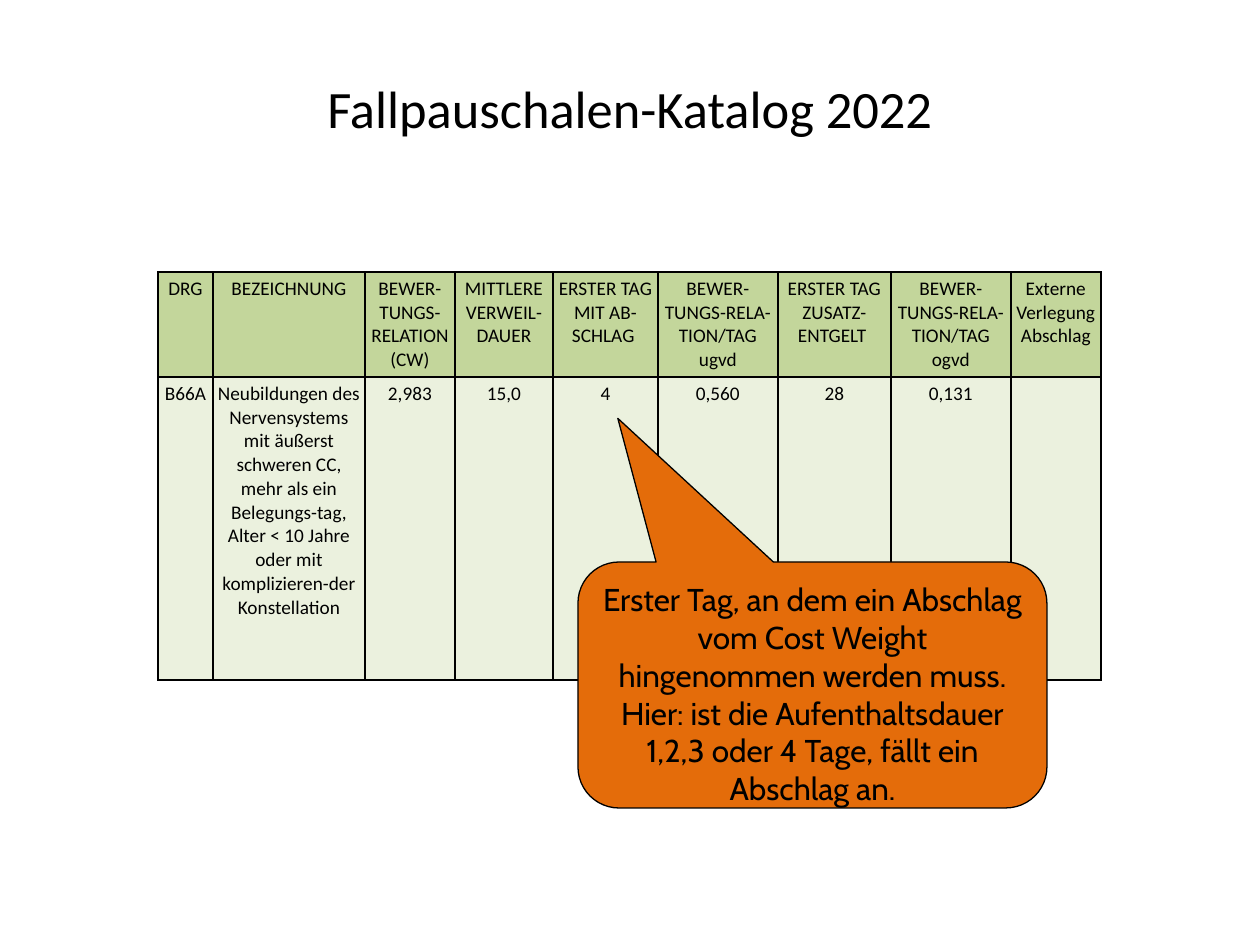
from dataclasses import dataclass

from lxml.etree import SubElement
from pptx import Presentation
from pptx.dml.color import RGBColor
from pptx.enum.shapes import MSO_SHAPE as Shape
from pptx.enum.text import MSO_ANCHOR as Anchor, PP_ALIGN as Align
from pptx.oxml.ns import qn
from pptx.util import Emu, Pt

PX_PER_INCH = 126


@dataclass(frozen=True)
class Theme:
    text: str = "000000"
    border: str = "000000"
    header: str = "C3D69B"
    body: str = "EBF1DE"
    callout: str = "E46C0A"
    font: str = "Calibri"
    callout_font: str = "Cabin"
    title_size: int = 30
    table_size: int = 11
    callout_size: int = 18


def px(n):
    return Emu(round(n * 914400 / PX_PER_INCH))


def rgb(value):
    return RGBColor.from_string(value)


def write(tf, text, *, font, size, color, align=Align.CENTER):
    """Fill a text frame, one paragraph per line of text."""
    for i, line in enumerate(text.split("\n")):
        p = tf.paragraphs[0] if i == 0 else tf.add_paragraph()
        p.alignment = align
        r = p.add_run()
        r.text = line
        r.font.name, r.font.size = font, Pt(size)
        r.font.color.rgb = rgb(color)


class SlideBuilder:
    def __init__(self, slide, theme):
        self.s, self.theme = slide, theme

    def title(self, text, x, y, w, h, top_inset):
        t = self.theme
        tf = self.s.shapes.add_textbox(px(x), px(y), px(w), px(h)).text_frame
        tf.word_wrap = True
        tf.margin_top = px(top_inset)
        write(tf, text, font=t.font, size=t.title_size, color=t.text)

    def table(self, rows, x, y, widths, heights):
        frame = self.s.shapes.add_table(len(rows), len(widths), px(x), px(y),
                                        px(sum(widths)), px(sum(heights)))
        table = frame.table
        table.first_row = table.horz_banding = False
        for col, w in zip(table.columns, widths):
            col.width = px(w)
        for row, h in zip(table.rows, heights):
            row.height = px(h)
        for i, row in enumerate(rows):
            fill = self.theme.header if i == 0 else self.theme.body
            for j, text in enumerate(row):
                self.cell(table.cell(i, j), text, fill)

    def cell(self, cell, text, fill):
        t = self.theme
        cell.margin_left = cell.margin_right = px(3)
        cell.margin_top = cell.margin_bottom = px(5)
        # Borders come before the fill in the cell properties
        for side in ("lnL", "lnR", "lnT", "lnB"):
            ln = SubElement(cell._tc.get_or_add_tcPr(), qn(f"a:{side}"), w=str(Pt(1)))
            SubElement(SubElement(ln, qn("a:solidFill")), qn("a:srgbClr"), val=t.border)
        cell.fill.solid()
        cell.fill.fore_color.rgb = rgb(fill)
        if text:
            write(cell.text_frame, text, font=t.font, size=t.table_size, color=t.text)

    def callout(self, text, x, y, w, h, adjustments):
        t = self.theme
        sp = self.s.shapes.add_shape(Shape.ROUNDED_RECTANGULAR_CALLOUT,
                                     px(x), px(y), px(w), px(h))
        sp.shadow.inherit = False
        for i, value in enumerate(adjustments):
            sp.adjustments[i] = value
        sp.fill.solid()
        sp.fill.fore_color.rgb = rgb(t.callout)
        sp.line.color.rgb = rgb(t.border)
        sp.line.width = Pt(0.75)
        tf = sp.text_frame
        tf.word_wrap = True
        tf.vertical_anchor = Anchor.TOP
        write(tf, text, font=t.callout_font, size=t.callout_size, color=t.text)


CATALOGUE = [
    ["DRG", "BEZEICHNUNG", "BEWER-TUNGS-RELATION (CW)", "MITTLERE VERWEIL-DAUER",
     "ERSTER TAG MIT AB-SCHLAG ", "BEWER-TUNGS-RELA-TION/TAG ugvd",
     "ERSTER TAG ZUSATZ- ENTGELT ", "BEWER-TUNGS-RELA-TION/TAG ogvd",
     "Externe Verlegung Abschlag"],
    ["B66A",
     "Neubildungen des Nervensystems mit äußerst schweren CC, mehr als "
     "ein Belegungs-tag, Alter < 10 Jahre oder mit komplizieren-der Konstellation",
     "2,983", "15,0", "4", "0,560", "28", "0,131", ""],
]


def main():
    prs = Presentation()
    prs.slide_width, prs.slide_height = px(1260), px(945)
    slide = SlideBuilder(prs.slides.add_slide(prs.slide_layouts[6]), Theme())

    # Title
    slide.title("Fallpauschalen-Katalog 2022", 63, 40, 1134, 190, top_inset=36)

    # Catalogue excerpt
    slide.table(CATALOGUE, 158, 272,
                widths=[55, 152, 90, 98, 105, 120, 113, 120, 90],
                heights=[105, 303])

    # Explanation of the first day with a deduction
    slide.callout("Erster Tag, an dem ein Abschlag vom Cost Weight hingenommen werden muss.\n"
                  "Hier: ist die Aufenthaltsdauer 1,2,3 oder 4 Tage, fällt ein Abschlag an.",
                  578, 562, 469, 246, adjustments=(-0.415, -1.084, 0.167))

    prs.save("out.pptx")


if __name__ == "__main__":
    main()
